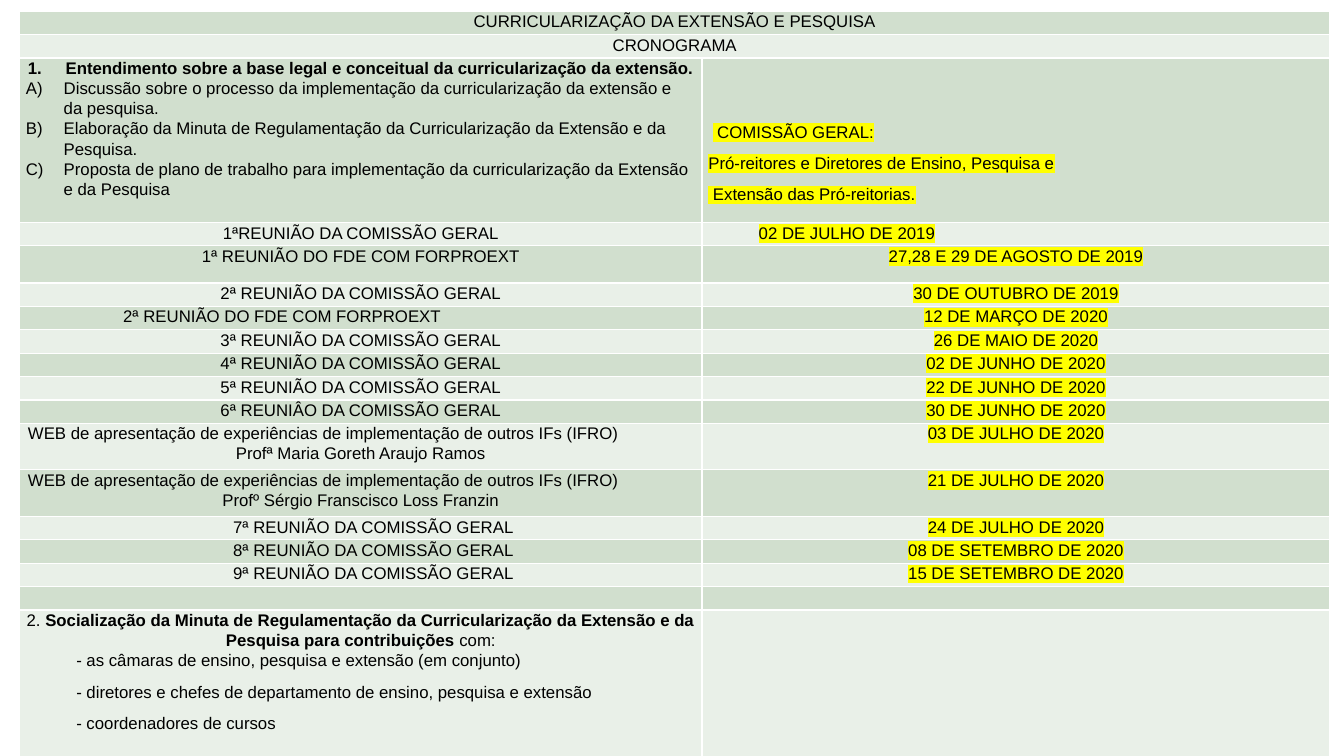
"""Build the schedule slide for bringing extension and research into the curriculum."""
from dataclasses import dataclass

from lxml.etree import SubElement
from pptx import Presentation
from pptx.dml.color import RGBColor
from pptx.enum.text import PP_ALIGN as Align
from pptx.oxml.ns import qn
from pptx.util import Pt

BLACK = RGBColor(0x00, 0x00, 0x00)
WHITE = RGBColor(0xFF, 0xFF, 0xFF)
YELLOW = RGBColor(0xFF, 0xFF, 0x00)
BANDS = (RGBColor(0xD1, 0xDF, 0xCE), RGBColor(0xE9, 0xF0, 0xE8))
FONT = "Arial"
SIZE = Pt(12)
SIDE = Pt(4.5)
COLUMNS = (Pt(487.5), Pt(448.5))
LINE = Pt(16.7)


@dataclass(frozen=True)
class Span:
    text: str
    bold: bool = False


@dataclass(frozen=True)
class Para:
    spans: tuple[Span, ...]
    align: Align = Align.CENTER
    after: float = 8
    left: float = 0
    first: float = 0
    number: str = ""
    tab: float = 0
    marked: bool = False


@dataclass(frozen=True)
class Entry:
    activity: tuple[Para, ...] = ()
    date: tuple[Para, ...] = ()
    height: int = LINE
    date_top: float = 0
    merged: bool = False


def line(text: str, **options) -> Para:
    return Para((Span(text),), **options)


def left_line(text: str, **options) -> Para:
    return line(text, align=Align.LEFT, **options)


def heading(text: str) -> Entry:
    return Entry((line(text),), merged=True)


def dated(activity: str, date: str, height: int = LINE, **options) -> Entry:
    return Entry((line(activity, **options),), (line(date, marked=True),), height)


def meeting(number: int, date: str, noun: str = "REUNIÃO", **options) -> Entry:
    return dated(f"{number}ª {noun} DA COMISSÃO GERAL", date, **options)


def webinar(speaker: str, date: str) -> Entry:
    topic = "WEB de apresentação de experiências de implementação de outros IFs (IFRO)"
    return Entry((left_line(topic, after=0, left=1.5), line(speaker)),
                 (line(date, marked=True),), Pt(33.3))


def lettered(text: str, after: float = 0) -> Para:
    return left_line(text, after=after, left=27, first=-27, number="alphaUcParenR")


LEGAL_BASIS = (
    Para((Span("Entendimento sobre a base legal e conceitual da curricularização da extensão.", True),),
         after=0, left=27, first=-27, number="arabicPeriod"),
    lettered("Discussão sobre o processo da implementação da curricularização da extensão e da pesquisa."),
    lettered("Elaboração da Minuta de Regulamentação da Curricularização da Extensão e da Pesquisa."),
    lettered("Proposta de plano de trabalho para implementação da curricularização da Extensão e da Pesquisa", 8),
)
COMMITTEE = (
    left_line(" COMISSÃO GERAL:", left=3, marked=True),
    left_line("Pró-reitores e Diretores de Ensino, Pesquisa e", marked=True),
    left_line(" Extensão das Pró-reitorias.", marked=True),
)
OUTREACH = (
    Para((Span("2. "),
          Span("Socialização da Minuta de Regulamentação da Curricularização da Extensão e da "
               "Pesquisa para contribuições ", True),
          Span("com:")), after=0),
    left_line("- as câmaras de ensino, pesquisa e extensão (em conjunto)", left=36),
    left_line("- diretores e chefes de departamento de ensino, pesquisa e extensão", left=36),
    left_line("- coordenadores de cursos", left=36),
)
LATE = {"left": 36, "first": -18}
SCHEDULE = (
    heading("CURRICULARIZAÇÃO DA EXTENSÃO E PESQUISA"),
    heading("CRONOGRAMA"),
    Entry(LEGAL_BASIS, COMMITTEE, Pt(117.5), date_top=45.5),
    Entry((line("1ªREUNIÃO DA COMISSÃO GERAL"),),
          (left_line("\t02 DE JULHO DE 2019", tab=125, marked=True),)),
    dated("1ª REUNIÃO DO FDE COM FORPROEXT", "27,28 E 29 DE AGOSTO DE 2019", Pt(26.6)),
    meeting(2, "30 DE OUTUBRO DE 2019"),
    dated("2ª REUNIÃO DO FDE COM FORPROEXT", "12 DE MARÇO DE 2020", align=Align.LEFT, left=69.5),
    meeting(3, "26 DE MAIO DE 2020"),
    meeting(4, "02 DE JUNHO DE 2020"),
    meeting(5, "22 DE JUNHO DE 2020"),
    meeting(6, "30 DE JUNHO DE 2020", "REUNIÂO"),
    webinar("Profª Maria Goreth Araujo Ramos", "03 DE JULHO DE 2020"),
    webinar("Profº Sérgio Franscisco Loss Franzin", "21 DE JULHO DE 2020"),
    meeting(7, "24 DE JULHO DE 2020", **LATE),
    meeting(8, "08 DE SETEMBRO DE 2020", **LATE),
    meeting(9, "15 DE SETEMBRO DE 2020", **LATE),
    Entry(),
    Entry(OUTREACH, height=Pt(115)),
)


def add_color(parent, color: RGBColor) -> None:
    SubElement(parent, qn("a:srgbClr"), val=str(color))


def write_para(paragraph, para: Para) -> None:
    properties = paragraph._p.get_or_add_pPr()
    properties.set("marL", str(Pt(para.left)))
    properties.set("indent", str(Pt(para.first)))
    if para.number:
        SubElement(properties, qn("a:buAutoNum"), type=para.number)
    if para.tab:
        tabs = SubElement(properties, qn("a:tabLst"))
        SubElement(tabs, qn("a:tab"), pos=str(Pt(para.tab)), algn="ctr")
    paragraph.alignment = para.align
    paragraph.line_spacing = 1.07
    paragraph.space_after = Pt(para.after)
    for span in para.spans:
        run = paragraph.add_run()
        run.text = span.text
        run.font.size = SIZE
        run.font.bold = span.bold
        run.font.color.rgb = BLACK
        if para.marked:
            add_color(SubElement(run._r.get_or_add_rPr(), qn("a:highlight")), YELLOW)
        run.font.name = FONT


def format_cell(cell, band: RGBColor, top: float = 0) -> None:
    cell.margin_left = cell.margin_right = SIDE
    cell.margin_top, cell.margin_bottom = Pt(top), 0
    properties = cell._tc.get_or_add_tcPr()
    for side in ("lnL", "lnR", "lnT", "lnB"):
        border = SubElement(properties, qn(f"a:{side}"), w=str(Pt(1)))
        add_color(SubElement(border, qn("a:solidFill")), WHITE)
    cell.fill.solid()
    cell.fill.fore_color.rgb = band


def write_cell(cell, paras: tuple[Para, ...]) -> None:
    frame = cell.text_frame
    for index, para in enumerate(paras):
        write_para(frame.add_paragraph() if index else frame.paragraphs[0], para)
    if not paras:
        SubElement(frame.paragraphs[0]._p, qn("a:endParaRPr"), sz=str(int(SIZE.pt * 100)))


def add_schedule(page, entries: tuple[Entry, ...]) -> None:
    height = sum(entry.height for entry in entries)
    table = page.shapes.add_table(len(entries), len(COLUMNS), Pt(14), Pt(8), sum(COLUMNS), height).table
    table.first_row = table.horz_banding = False
    for column, width in zip(table.columns, COLUMNS):
        column.width = width
    for index, entry in enumerate(entries):
        table.rows[index].height = entry.height
        activity, date = table.cell(index, 0), table.cell(index, 1)
        band = BANDS[index % 2]
        format_cell(activity, band)
        format_cell(date, band, entry.date_top)
        if entry.merged:
            activity.merge(date)
        write_cell(activity, entry.activity)
        write_cell(date, entry.date)


def main() -> None:
    deck = Presentation()
    deck.slide_width, deck.slide_height = Pt(960), Pt(540)
    page = deck.slides.add_slide(deck.slide_layouts[6])
    add_schedule(page, SCHEDULE)
    deck.save("out.pptx")


if __name__ == "__main__":
    main()
